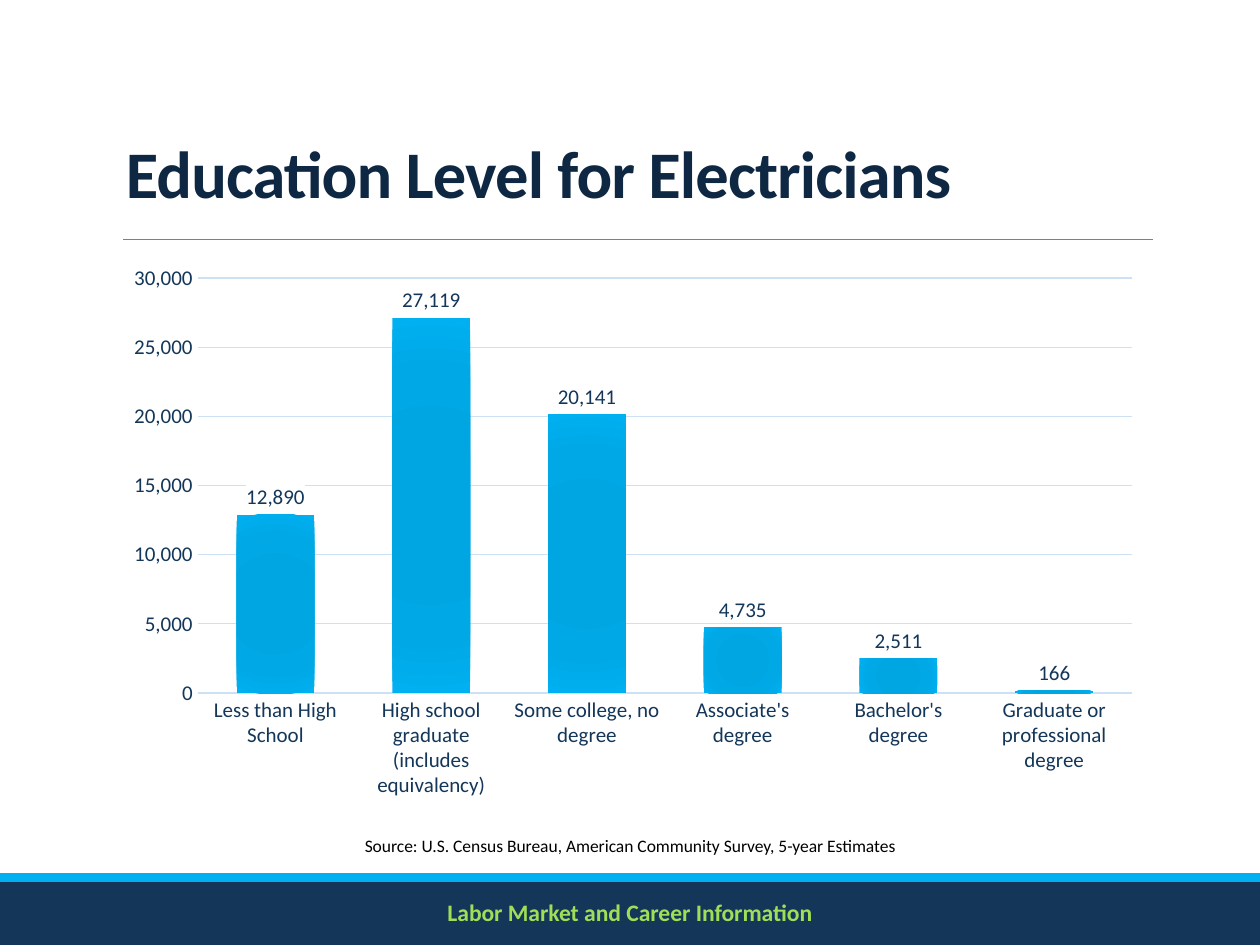
from lxml import etree
from pptx import Presentation
from pptx.chart.data import CategoryChartData
from pptx.dml.color import RGBColor
from pptx.enum.chart import XL_CHART_TYPE as ChartType, XL_LABEL_POSITION as LabelPos
from pptx.enum.chart import XL_TICK_MARK as Tick
from pptx.enum.shapes import MSO_CONNECTOR as Connector, MSO_SHAPE as Shape
from pptx.enum.text import MSO_ANCHOR as Anchor, PP_ALIGN as Align
from pptx.oxml import parse_xml
from pptx.oxml.ns import nsdecls, qn
from pptx.util import Inches, Pt

COLS, ROWS = 100, 75
NAVY, SKY, PALE = "133659", "00B0F0", "CDE1F4"

EDUCATION = {
    "Less than High School": 12890,
    "High school graduate (includes equivalency)": 27119,
    "Some college, no degree": 20141,
    "Associate's degree": 4735,
    "Bachelor's degree": 2511,
    "Graduate or professional degree": 166,
}
BAR_STOPS = [(0, "00A4E0"), (34, "00A6E2"), (70, "00A8E5"), (100, SKY)]


def rgb(color):
    return RGBColor.from_string(color)


def radial_fill(stops):
    """Return a gradFill element running outwards from the centre."""
    gs = "".join(
        f'<a:gs pos="{pos * 1000}"><a:srgbClr val="{color}"/></a:gs>' for pos, color in stops
    )
    return parse_xml(
        f'<a:gradFill {nsdecls("a")} rotWithShape="1"><a:gsLst>{gs}</a:gsLst>'
        '<a:path path="circle"><a:fillToRect l="100000" t="100000" r="100000" b="100000"/>'
        "</a:path></a:gradFill>"
    )


class SlideBuilder:
    """Draws on one slide; positions are columns and rows of a 100 x 75 grid."""

    font = "Calibri"

    def __init__(self, prs):
        self.cell_w = prs.slide_width / COLS
        self.cell_h = prs.slide_height / ROWS
        self.slide = prs.slides.add_slide(prs.slide_layouts[6])

    def box(self, x, y, w, h):
        cw, ch = self.cell_w, self.cell_h
        return round(x * cw), round(y * ch), round(w * cw), round(h * ch)

    def style(self, font, size, color, bold=False):
        font.name, font.size, font.bold = self.font, Pt(size), bold
        font.color.rgb = rgb(color)

    def band(self, y, h, color):
        sp = self.slide.shapes.add_shape(Shape.RECTANGLE, *self.box(0, y, COLS, h))
        sp.shadow.inherit = False
        sp.fill.solid()
        sp.fill.fore_color.rgb = rgb(color)
        sp.line.fill.background()

    def rule(self, x1, x2, y, color, width):
        left, top, length, _ = self.box(x1, y, x2 - x1, 0)
        line = self.slide.shapes.add_connector(
            Connector.STRAIGHT, left, top, left + length, top
        )
        line.line.color.rgb = rgb(color)
        line.line.width = Pt(width)
        etree.SubElement(line._element.spPr, qn("a:effectLst"))

    def text(self, text, at, size, color, bold=False, align=Align.CENTER,
             anchor=Anchor.TOP, line_spacing=None, tracking=None):
        tf = self.slide.shapes.add_textbox(*self.box(*at)).text_frame
        tf.word_wrap = True
        tf.vertical_anchor = anchor
        p = tf.paragraphs[0]
        p.text = text
        p.alignment = align
        p.line_spacing = line_spacing
        r = p.runs[0]
        self.style(r.font, size, color, bold)
        if tracking:
            r._r.get_or_add_rPr().set("spc", str(round(tracking * 100)))

    def axis(self, axis):
        axis.major_tick_mark = axis.minor_tick_mark = Tick.NONE
        self.style(axis.tick_labels.font, 12, NAVY)

    def column_chart(self, values, at):
        data = CategoryChartData(number_format="#,##0")
        data.categories = list(values)
        data.add_series("Series 1", list(values.values()))
        chart = self.slide.shapes.add_chart(
            ChartType.COLUMN_CLUSTERED, *self.box(*at), data
        ).chart
        chart.has_legend = chart.has_title = False
        self.style(chart.font, 10, "000000")

        cat, val = chart.category_axis, chart.value_axis
        for axis in (cat, val):
            self.axis(axis)
        val.minimum_scale, val.maximum_scale, val.major_unit = 0, 30000, 5000
        val.tick_labels.number_format = "#,##0"
        val.tick_labels.number_format_is_linked = False
        val.format.line.fill.background()
        val.has_major_gridlines = True
        for line in (cat.format.line, val.major_gridlines.format.line):
            line.color.rgb = rgb(PALE)
            line.width = Pt(0.75)

        plot = chart.plots[0]
        plot.gap_width, plot.overlap, plot.vary_by_categories = 100, -24, False
        series = plot.series[0]
        series.invert_if_negative = False
        series._element.get_or_add_spPr().insert(0, radial_fill(BAR_STOPS))
        self.value_labels(series.data_labels)

    def value_labels(self, labels):
        """Show values above the bars on white, so gridlines stay clear of them."""
        labels.show_value = True
        labels.position = LabelPos.OUTSIDE_END
        labels.number_format = "#,##0"
        labels.number_format_is_linked = False
        self.style(labels.font, 12, NAVY)
        labels._element.find(qn("c:numFmt")).addnext(parse_xml(
            f'<c:spPr {nsdecls("c", "a")}><a:solidFill><a:srgbClr val="FFFFFF"/>'
            "</a:solidFill><a:ln><a:noFill/></a:ln></c:spPr>"
        ))


def main():
    prs = Presentation()
    prs.slide_width, prs.slide_height = Inches(10), Inches(7.5)
    s = SlideBuilder(prs)
    s.band(70, 5, NAVY)
    s.band(69.3, 0.7, SKY)
    s.rule(9.8, 91.5, 19, "808080", 0.5)
    s.text("Labor Market and Career Information", (0, 70.8, COLS, 3.5), 13.5, "9FDF58", bold=True)
    s.text("Education Level for Electricians", (9, 9.2, 88.5, 9.8), 38, "0E2843", bold=True,
           align=Align.LEFT, anchor=Anchor.MIDDLE, line_spacing=0.85, tracking=-0.5)
    s.column_chart(EDUCATION, (9, 20.2, 82.5, 44))
    s.text("Source: U.S. Census Bureau, American Community Survey, 5-year Estimates",
           (0, 65.8, COLS, 2.7), 10, "000000")
    prs.save("out.pptx")


if __name__ == "__main__":
    main()
